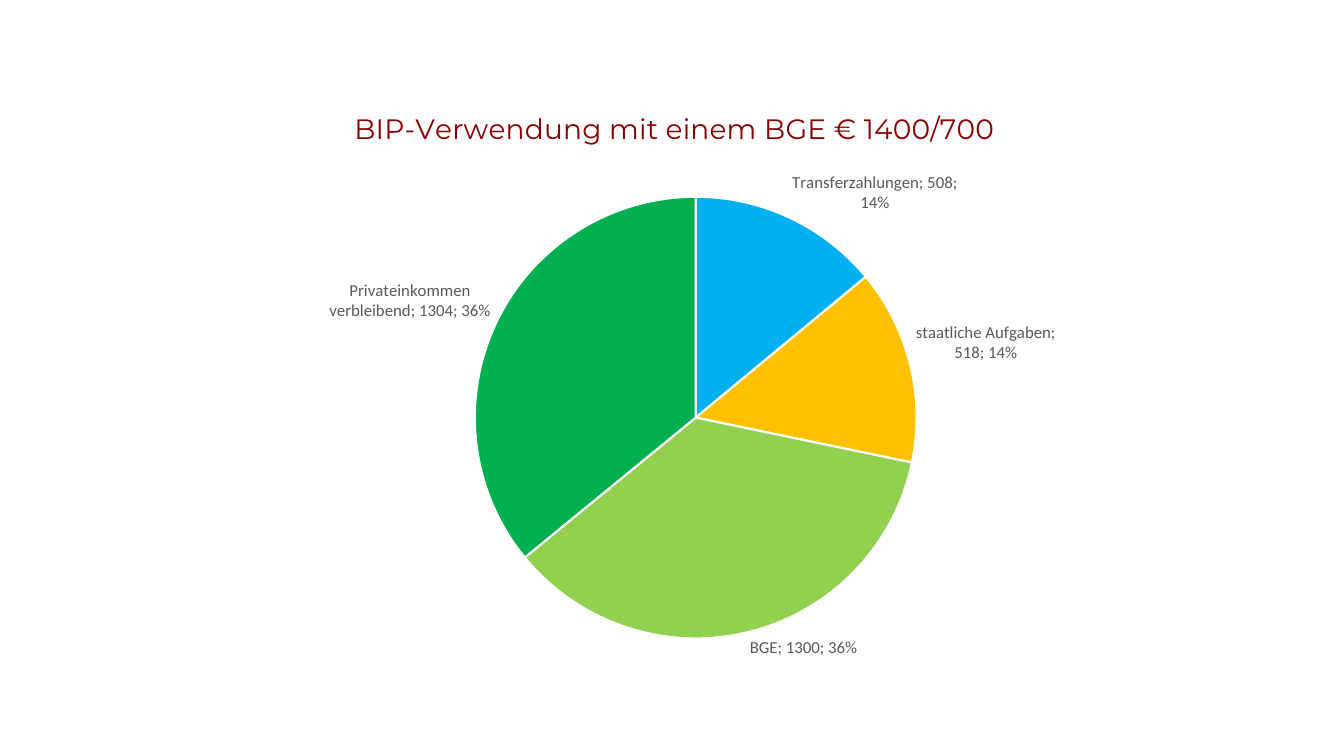
from lxml import etree
from pptx import Presentation
from pptx.chart.data import CategoryChartData
from pptx.dml.color import RGBColor
from pptx.enum.chart import XL_CHART_TYPE as ChartType, XL_LABEL_POSITION as LabelPos
from pptx.oxml import parse_xml
from pptx.oxml.ns import nsdecls, qn
from pptx.util import Inches, Pt

TITLE = "BIP-Verwendung mit einem BGE € 1400/700"
SLICES = [
    ("Transferzahlungen", 508, "00B0F0"),
    ("staatliche Aufgaben", 518, "FFC000"),
    ("BGE", 1300, "92D050"),
    ("Privateinkommen verbleibend", 1304, "00B050"),
]


def rgb(color):
    return RGBColor.from_string(color)


def set_font(font, name="Calibri", size=12, color="595959", bold=False):
    font.name, font.size, font.bold = name, Pt(size), bold
    font.color.rgb = rgb(color)


def add_text(tf, text, **font):
    r = tf.paragraphs[0].add_run()
    r.text = text
    set_font(r.font, **font)


def manual_layout(**parts):
    """Return a c:layout whose children are the given tags and values."""
    tags = "".join(f'<c:{tag} val="{val}"/>' for tag, val in parts.items())
    return parse_xml(f'<c:layout {nsdecls("c")}><c:manualLayout>{tags}'
                     '</c:manualLayout></c:layout>')


def set_title(chart, text):
    chart.has_title = True
    title = chart.chart_title
    add_text(title.text_frame, text, name="Montserrat", size=20, color="880000")
    title.include_in_layout = False
    el = title._element
    for old in el.findall(qn("c:layout")):
        el.remove(old)
    el.find(qn("c:tx")).addnext(
        manual_layout(xMode="edge", yMode="edge", x=0.14, y=0.04))


def set_labels(plot):
    plot.has_data_labels = True
    labels = plot.data_labels
    set_font(labels.font)
    labels.position = LabelPos.OUTSIDE_END
    labels.show_category_name = labels.show_value = labels.show_percentage = True
    separator = etree.Element(qn("c:separator"))
    separator.text = "; "
    el = labels._element
    last_flag = el.find(qn("c:showBubbleSize"))
    if last_flag is None:
        last_flag = el.find(qn("c:showPercent"))
    last_flag.addnext(separator)


def place_pie(chart):
    area = chart._chartSpace.find(".//" + qn("c:plotArea"))
    for old in area.findall(qn("c:layout")):
        area.remove(old)
    area.insert(0, manual_layout(layoutTarget="inner", xMode="edge", yMode="edge",
                                 x=0.28, y=0.196, w=0.493, h=0.739))


def add_gdp_pie(slide, left, top, width, height):
    names, values, colors = zip(*SLICES)
    data = CategoryChartData()
    data.categories = names
    data.add_series("Series 1", values)
    chart = slide.shapes.add_chart(
        ChartType.PIE, Inches(left), Inches(top), Inches(width), Inches(height), data).chart
    set_font(chart.font, size=10, color="000000")
    chart.has_legend = False
    set_title(chart, TITLE)
    plot = chart.plots[0]
    plot.vary_by_categories = True
    for i, color in enumerate(colors):
        fmt = plot.series[0].points[i].format
        fmt.fill.solid()
        fmt.fill.fore_color.rgb = rgb(color)
        fmt.line.color.rgb = rgb("FFFFFF")
        fmt.line.width = Pt(1.5)
    set_labels(plot)
    place_pie(chart)


def main():
    prs = Presentation()
    prs.slide_width, prs.slide_height = Inches(13.33), Inches(7.5)
    s = prs.slides.add_slide(prs.slide_layouts[6])
    add_gdp_pie(s, 2.22, 0.79, 8.89, 5.93)
    prs.save("out.pptx")


if __name__ == "__main__":
    main()
